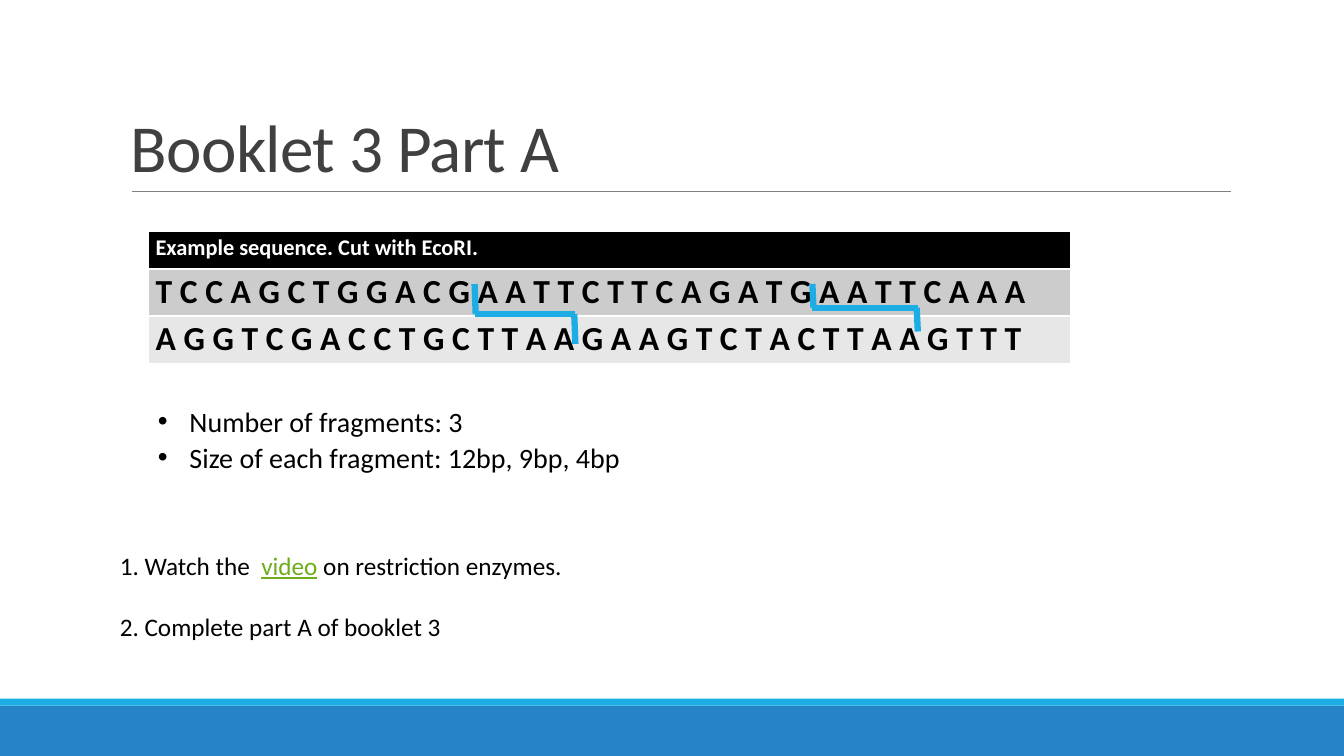
from lxml import etree
from pptx import Presentation
from pptx.dml.color import RGBColor
from pptx.enum.shapes import MSO_CONNECTOR as CONNECTOR, MSO_SHAPE as SHAPE
from pptx.enum.text import MSO_ANCHOR as ANCHOR
from pptx.oxml.ns import qn
from pptx.util import Pt

FONT = "Calibri"
BLACK, WHITE, CYAN, LINK = "000000", "FFFFFF", "1CADE4", "6EAC1C"
WIDTH, HEIGHT = 960, 540

BANDS = [(504, 36, "2683C6"), (499, 5, CYAN)]
TITLE = "Booklet 3 Part A"
SEQUENCE = [
    ("Example sequence. Cut with EcoRI.", 16, WHITE, BLACK, 26.5),
    ("T C C A G C T G G A C G A A T T C T T C A G A T G A A T T C A A A", 24, BLACK, "CCCCCC", 33.7),
    ("A G G T C G A C C T G C T T A A G A A G T C T A C T T A A G T T T", 24, BLACK, "E7E7E7", 33.7),
]
CUTS = [(339, 411, 224.3, 21.4), (580.3, 655.6, 219.8, 17)]
RESULTS = ["Number of fragments: 3", "Size of each fragment: 12bp, 9bp, 4bp"]
TASKS = [
    [("1. Watch the  ", BLACK), ("video", LINK), (" on restriction enzymes.", BLACK)],
    [("2. Complete part A of booklet 3", BLACK)],
]


def colour(value):
    return RGBColor.from_string(value)


def style(run, size, tint, bold=False):
    run.font.name, run.font.size, run.font.bold = FONT, Pt(size), bold
    run.font.color.rgb = colour(tint)


def add_line(slide, start, end, tint, weight):
    line = slide.shapes.add_connector(CONNECTOR.STRAIGHT, *map(Pt, start + end))
    line.line.color.rgb = colour(tint)
    line.line.width = Pt(weight)
    etree.SubElement(line._element.spPr, qn("a:effectLst"))


def add_text(slide, *box):
    frame = slide.shapes.add_textbox(*map(Pt, box)).text_frame
    frame.word_wrap = True
    return frame


def add_sequence(slide):
    heights = [row[-1] for row in SEQUENCE]
    frame = slide.shapes.add_table(len(SEQUENCE), 1, Pt(105.8), Pt(165.6), Pt(658.8), Pt(sum(heights)))
    table = frame.table
    for row, (text, size, tint, fill, height) in zip(table.rows, SEQUENCE):
        row.height = Pt(height)
        cell = row.cells[0]
        cell.fill.solid()
        cell.fill.fore_color.rgb = colour(fill)
        cell.margin_left = cell.margin_right = Pt(5.4)
        cell.margin_top = cell.margin_bottom = 0
        cell.text_frame.text = text
        paragraph = cell.text_frame.paragraphs[0]
        paragraph.line_spacing = 1.07
        style(paragraph.runs[0], size, tint, bold=True)


def add_results(slide):
    frame = add_text(slide, 105.8, 283.7, 453.6, 83.5)
    frame.text = "\n".join(RESULTS)
    for paragraph in frame.paragraphs:
        paragraph.line_spacing = 1.07
        props = paragraph._p.get_or_add_pPr()
        props.set("marL", str(Pt(22.5)))
        props.set("indent", str(-Pt(22.5)))
        etree.SubElement(props, qn("a:buFont"), typeface="Arial")
        etree.SubElement(props, qn("a:buChar"), char="•")
        style(paragraph.runs[0], 20, BLACK)


def add_tasks(slide):
    frame = add_text(slide, 78.5, 389.5, 480.2, 72.7)
    for index, task in enumerate(TASKS):
        paragraph = frame.add_paragraph() if index else frame.paragraphs[0]
        if index:
            paragraph.space_before = Pt(22)
        for text, tint in task:
            run = paragraph.add_run()
            run.text = text
            style(run, 18, tint)
            run.font.underline = tint == LINK


def main():
    """Build the restriction enzyme slide and save it."""
    deck = Presentation()
    deck.slide_width, deck.slide_height = Pt(WIDTH), Pt(HEIGHT)
    slide = deck.slides.add_slide(deck.slide_layouts[6])

    for top, height, fill in BANDS:
        band = slide.shapes.add_shape(SHAPE.RECTANGLE, 0, Pt(top), Pt(WIDTH), Pt(height))
        band.shadow.inherit = False
        band.fill.solid()
        band.fill.fore_color.rgb = colour(fill)
        band.line.fill.background()
    add_line(slide, (94.3, 136.8), (879, 136.8), "808080", 0.5)

    title = add_text(slide, 86.4, 22.3, 792, 114.5)
    title.vertical_anchor = ANCHOR.BOTTOM
    title.text = TITLE
    heading = title.paragraphs[0]
    heading.line_spacing = 0.85
    style(heading.runs[0], 48, "404040")
    heading.runs[0]._r.get_or_add_rPr().set("spc", "-50")

    add_sequence(slide)
    for left, right, middle, reach in CUTS:
        add_line(slide, (left, middle), (right, middle), CYAN, 4.5)
        add_line(slide, (left, middle - reach), (left + 0.8, middle), CYAN, 4.5)
        add_line(slide, (right - 0.8, middle), (right, middle + reach), CYAN, 4.5)
    add_results(slide)
    add_tasks(slide)
    deck.save("out.pptx")


if __name__ == "__main__":
    main()
